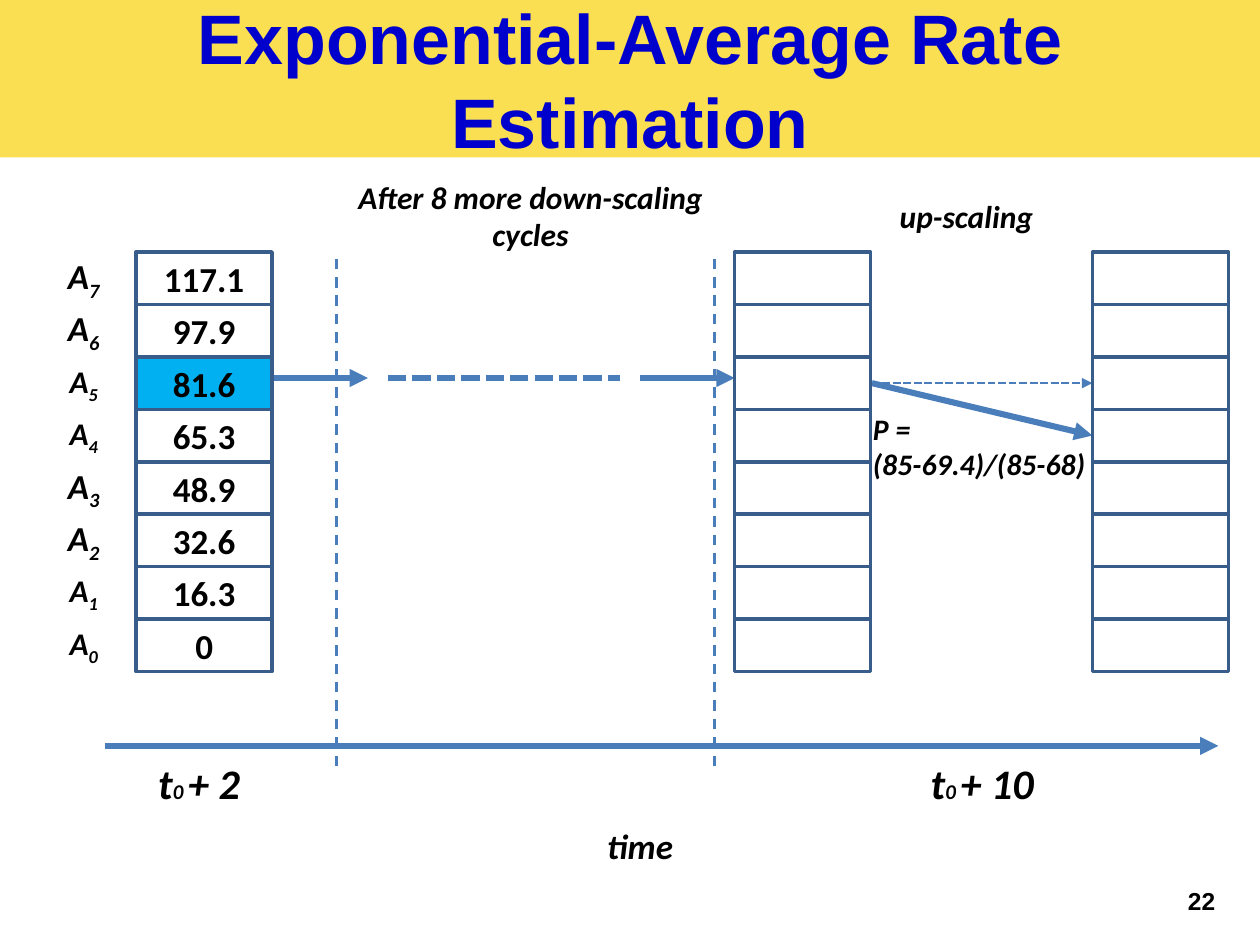
from lxml.etree import SubElement
from pptx import Presentation
from pptx.dml.color import RGBColor
from pptx.enum.dml import MSO_LINE
from pptx.enum.shapes import MSO_CONNECTOR, MSO_SHAPE
from pptx.enum.text import MSO_ANCHOR, PP_ALIGN
from pptx.oxml.ns import qn
from pptx.util import Inches, Pt

YELLOW = RGBColor(0xFB, 0xDF, 0x53)
TITLE_BLUE = RGBColor(0x00, 0x00, 0xCC)
LINE_BLUE = RGBColor(0x4A, 0x7E, 0xBB)
BORDER_BLUE = RGBColor(0x38, 0x5D, 0x8A)
HIGHLIGHT = RGBColor(0x00, 0xB0, 0xF0)
WHITE = RGBColor(0xFF, 0xFF, 0xFF)
BLACK = RGBColor(0x00, 0x00, 0x00)

RATES = ["117.1", "97.9", "81.6", "65.3", "48.9", "32.6", "16.3", "0"]
LABEL_SIZES = [20, 20, 18, 18, 20, 20, 18, 18]
HIGHLIGHT_ROW = 2
GRID_TOP, GRID_HEIGHT = 2, 3.33
CELL_WIDTH = 1.08
THICK, THIN = 3.5, 1.5


def format_span(span, size, italic=True, name="Calibri", color=BLACK):
    font = span.font
    font.name, font.size = name, Pt(size)
    font.bold, font.italic = True, italic
    font.color.rgb = color


def add_label(page, box, lines, align=PP_ALIGN.CENTER, anchor=MSO_ANCHOR.MIDDLE, **style):
    """Add a text box; each line is a list of (text, size, baseline) spans."""
    frame = page.shapes.add_textbox(*map(Inches, box)).text_frame
    frame.word_wrap = True
    frame.vertical_anchor = anchor
    for index, spans in enumerate(lines):
        para = frame.paragraphs[0] if index == 0 else frame.add_paragraph()
        para.alignment = align
        for text, size, baseline in spans:
            span = para.add_run()
            span.text = text
            format_span(span, size, **style)
            if baseline:
                span.font._element.set("baseline", str(baseline * 1000))


def add_line(page, start, end, width, dash=None, arrow=False):
    line = page.shapes.add_connector(
        MSO_CONNECTOR.STRAIGHT, *map(Inches, (*start, *end)))
    line.line.color.rgb = LINE_BLUE
    line.line.width = Pt(width)
    if dash:
        line.line.dash_style = dash
    properties = line._element.spPr
    if arrow:
        SubElement(properties.find(qn("a:ln")), qn("a:tailEnd"), type="triangle")
    SubElement(properties, qn("a:effectLst"))


def add_title(page, box, text):
    title = page.shapes.title
    title.left, title.top, title.width, title.height = map(Inches, box)
    title.fill.solid()
    title.fill.fore_color.rgb = YELLOW
    frame = title.text_frame
    frame.text = text
    frame.word_wrap = True
    frame.vertical_anchor = MSO_ANCHOR.MIDDLE
    para = frame.paragraphs[0]
    para.alignment = PP_ALIGN.CENTER
    format_span(para.runs[0], 40, italic=False, name="Arial", color=TITLE_BLUE)


def add_counter_column(page, box, values, highlight=None):
    left, top, width, height = box
    row_height = height / len(values)
    for row, value in enumerate(values):
        cell = page.shapes.add_shape(
            MSO_SHAPE.RECTANGLE,
            *map(Inches, (left, top + row * row_height, width, row_height)))
        cell.shadow.inherit = False
        cell.fill.solid()
        cell.fill.fore_color.rgb = HIGHLIGHT if row == highlight else WHITE
        cell.line.color.rgb = BORDER_BLUE
        cell.line.width = Pt(2)
        if value:
            frame = cell.text_frame
            frame.text = value
            frame.vertical_anchor = MSO_ANCHOR.MIDDLE
            para = frame.paragraphs[0]
            para.alignment = PP_ALIGN.CENTER
            format_span(para.runs[0], 20, italic=False)


def add_row_labels(page, box):
    left, top, width, height = box
    count = len(LABEL_SIZES)
    row_height = height / count
    for row, size in enumerate(LABEL_SIZES):
        add_label(page, (left, top + row * row_height, width, row_height),
                  [[("A", size, 0), (str(count - 1 - row), size, -25)]])


def add_time_axis(page, box):
    left, top, width, height = box
    add_line(page, (left, top), (left + width, top), THICK, arrow=True)
    for offset, label_width, steps in [(0.25, 1, "+ 2"), (6.34, 1.25, "+ 10")]:
        add_label(page, (left + offset, top + 0.08, label_width, 0.42),
                  [[("t", 24, 0), ("0 ", 12, 0), (steps, 24, 0)]])
    add_label(page, (left + 3.75, top + height - 0.42, 1, 0.42), [[("time", 20, 0)]])


def add_down_scaling(page, box):
    """Draw the skipped cycles between the first two columns."""
    left, top, width, height = box
    right, arrow_y = left + width, top + 1
    for x in (left + 0.5, right - 0.16):
        add_line(page, (x, top + height), (x, top), THIN, MSO_LINE.DASH)
    add_line(page, (left, arrow_y), (left + 0.75, arrow_y), THICK, arrow=True)
    add_line(page, (left + 0.91, arrow_y), (right - 0.91, arrow_y), THICK,
             MSO_LINE.SQUARE_DOT)
    add_line(page, (right - 0.75, arrow_y), (right, arrow_y), THICK, arrow=True)
    add_label(page, (left + 0.25, top - 0.5, 3.58, 0.42),
              [[("After 8 more down-scaling cycles", 18, 0)]])


def add_up_scaling(page, box):
    """Draw the two possible moves between the last two columns."""
    left, top, width, height = box
    row_height = height / len(RATES)
    start_y = top + 2.5 * row_height
    right = left + width
    add_line(page, (left, start_y), (right, start_y + row_height), THICK, arrow=True)
    add_line(page, (left, start_y), (right, start_y), THIN, MSO_LINE.SQUARE_DOT, arrow=True)
    add_label(page, (left - 0.25, top - 0.5, 2, 0.42), [[("up-scaling", 18, 0)]])
    add_label(page, (left - 0.09, top + 1.33, 1.92, 0.42),
              [[("P =", 17, 0)], [("(85-69.4)/(85-68)", 17, 0)]], align=PP_ALIGN.LEFT)


def main():
    deck = Presentation()
    deck.slide_width, deck.slide_height = Inches(10), Inches(7.5)
    page = deck.slides.add_slide(deck.slide_layouts[5])

    add_title(page, (0, 0, 10, 1.25), "Exponential-Average Rate Estimation")
    add_row_labels(page, (0.33, GRID_TOP, 0.67, GRID_HEIGHT))
    add_time_axis(page, (0.83, 5.92, 8.84, 1))
    add_down_scaling(page, (2.17, GRID_TOP, 3.66, 4.08))
    add_up_scaling(page, (6.92, GRID_TOP, 1.75, GRID_HEIGHT))

    empty = [""] * len(RATES)
    for left, values, highlight in [
            (1.08, RATES, HIGHLIGHT_ROW), (5.83, empty, None), (8.67, empty, None)]:
        add_counter_column(page, (left, GRID_TOP, CELL_WIDTH, GRID_HEIGHT),
                           values, highlight)

    add_label(page, (9.33, 6.98, 0.67, 0.52), [[("22", 14, 0)]], align=PP_ALIGN.LEFT,
              anchor=MSO_ANCHOR.TOP, italic=False, name="Arial")
    deck.save("out.pptx")


if __name__ == "__main__":
    main()
